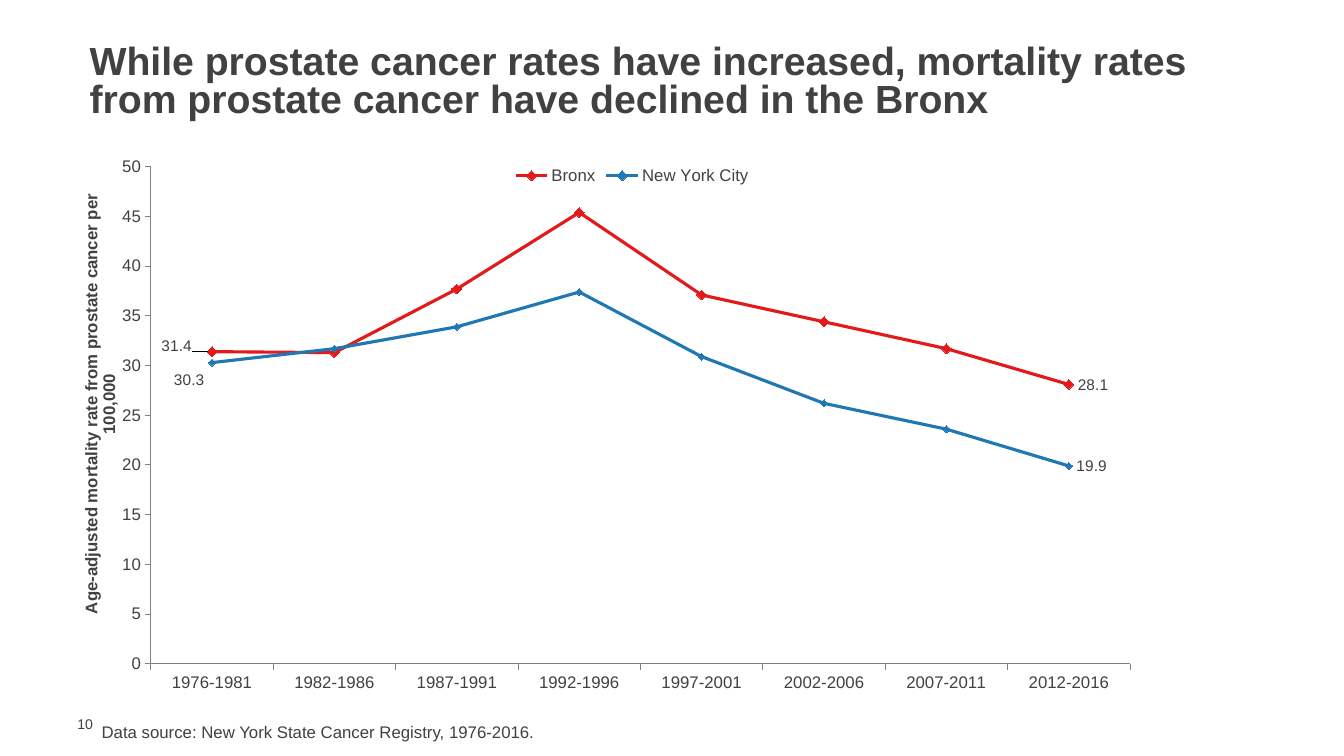
from lxml import etree
from pptx import Presentation
from pptx import util as u
from pptx.chart.data import CategoryChartData
from pptx.dml.color import RGBColor
from pptx.enum import chart as ch, text
from pptx.oxml import parse_xml
from pptx.oxml.ns import nsdecls

INK = RGBColor(0x41, 0x40, 0x42)
GREY = RGBColor(0x80, 0x80, 0x80)
RED = RGBColor(0xE3, 0x1A, 0x1C)
BLUE = RGBColor(0x1F, 0x78, 0xB4)

SPANS = ["1976-1981", "1982-1986", "1987-1991", "1992-1996",
         "1997-2001", "2002-2006", "2007-2011", "2012-2016"]
# name, rates, colour, marker size, shift of the first label
RATES = [
    ("Bronx", [31.4, 31.3, 37.7, 45.4, 37.1, 34.4, 31.7, 28.1], RED, 7, (-0.01, -0.01)),
    ("New York City", [30.3, 31.7, 33.9, 37.4, 30.9, 26.2, 23.6, 19.9], BLUE, 5, (0, 0.03)),
]
LEADERS = (
    f'<c:extLst {nsdecls("c")}><c:ext uri="{{CE6537A1-D6FC-4f65-9D91-7224C49458BB}}" '
    'xmlns:c15="http://schemas.microsoft.com/office/drawing/2012/chart">'
    '<c15:showLeaderLines val="1"/></c:ext></c:extLst>')


def px(n):
    return u.Emu(n * 9144)


def layout(x, y, w=None, h=None, edge=False):
    """Manual chart layout in fractions; edge measures from the chart corner."""
    tags = [("layoutTarget", "inner")] if w else []
    if edge:
        tags += [("xMode", "edge"), ("yMode", "edge")]
    tags += [("x", x), ("y", y)]
    if w:
        tags += [("w", w), ("h", h)]
    body = "".join(f'<c:{t} val="{v}"/>' for t, v in tags)
    return parse_xml(f'<c:layout {nsdecls("c")}><c:manualLayout>{body}'
                     '</c:manualLayout></c:layout>')


def place(node, lay, spot):
    """Put a layout at the given child index, replacing any old one."""
    for old in node.xpath("./c:layout"):
        node.remove(old)
    node.insert(spot, lay)


class Deck:
    def __init__(self, face="Arial"):
        self.face = face
        self.prs = Presentation()
        self.prs.slide_width, self.prs.slide_height = px(1333), px(750)
        self.slide = self.prs.slides.add_slide(self.prs.slide_layouts[6])

    def style(self, font, size, bold=False):
        font.name, font.size, font.bold = self.face, u.Pt(size), bold
        font.color.rgb = INK

    def text(self, box, words, size, bold=False, mid=False, pad=(10, 5, 10, 5), gap=1.0):
        frame = self.slide.shapes.add_textbox(*map(px, box)).text_frame
        frame.word_wrap = True
        frame.margin_left, frame.margin_top, frame.margin_right, frame.margin_bottom = map(px, pad)
        if mid:
            frame.vertical_anchor = text.MSO_ANCHOR.MIDDLE
        frame.text = words
        para = frame.paragraphs[0]
        para.line_spacing = gap
        self.style(para.runs[0].font, size, bold)

    def axis(self, axis):
        axis.has_major_gridlines = False
        axis.major_tick_mark = ch.XL_TICK_MARK.OUTSIDE
        axis.minor_tick_mark = ch.XL_TICK_MARK.NONE
        axis.format.line.color.rgb = GREY
        axis.format.line.width = u.Pt(0.75)
        self.style(axis.tick_labels.font, 12)

    def label(self, point, side):
        label = point.data_label
        self.style(label.font, 11)
        label.position = side

    def line(self, line, tint, size):
        line.smooth = False
        line.format.line.color.rgb = tint
        line.format.line.width = u.Pt(2.25)
        mark = line.marker
        mark.style, mark.size = ch.XL_MARKER_STYLE.DIAMOND, size
        mark.format.fill.solid()
        mark.format.fill.fore_color.rgb = tint
        mark.format.line.color.rgb = tint
        line.data_labels.show_value = False
        self.label(line.points[0], ch.XL_LABEL_POSITION.LEFT)
        self.label(line.points[len(SPANS) - 1], ch.XL_LABEL_POSITION.RIGHT)

    def chart(self, box, title):
        data = CategoryChartData(number_format="0.0")
        data.categories = SPANS
        for name, rates, *_ in RATES:
            data.add_series(name, rates)
        chart = self.slide.shapes.add_chart(
            ch.XL_CHART_TYPE.LINE_MARKERS, *map(px, box), data).chart
        self.style(chart.font, 10)
        chart.has_title = False
        chart.plots[0].vary_by_categories = False

        self.axis(chart.category_axis)
        rate = chart.value_axis
        self.axis(rate)
        rate.minimum_scale, rate.maximum_scale, rate.major_unit = 0, 50, 5
        rate.tick_labels.number_format = "0"
        rate.tick_labels.number_format_is_linked = False
        rate.axis_title.text_frame.text = title
        self.style(rate.axis_title.text_frame.paragraphs[0].runs[0].font, 12, True)

        chart.has_legend = True
        chart.legend.position = ch.XL_LEGEND_POSITION.TOP
        chart.legend.include_in_layout = False
        self.style(chart.legend.font, 12)

        for line, (_, _, tint, size, _) in zip(chart.plots[0].series, RATES):
            self.line(line, tint, size)

        root = chart.element
        for labels, (*_, shift) in zip(root.xpath(".//c:ser/c:dLbls"), RATES):
            place(labels.xpath("./c:dLbl")[0], layout(*shift), 1)
            labels.append(etree.fromstring(LEADERS))
        place(root.xpath(".//c:plotArea")[0], layout(0.106, 0.017, 0.883, 0.884, True), 0)
        place(root.xpath(".//c:valAx/c:title")[0], layout(0.04, 0.06, edge=True), 1)
        place(root.xpath(".//c:legend")[0], layout(0.43, 0.01, edge=True), 1)


def main():
    deck = Deck()
    deck.text((67, 710, 43, 17), "10", 10, mid=True, pad=(10, 0, 0, 0))
    deck.text((91, 711, 992, 30),
              "Data source: New York State Cancer Registry, 1976-2016.", 12)
    deck.text((79, 40, 1175, 85),
              "While prostate cancer rates have increased, mortality rates "
              "from prostate cancer have declined in the Bronx",
              28, bold=True, mid=True, gap=0.8)
    deck.chart((33, 156, 1100, 558),
               "Age-adjusted mortality rate from prostate cancer per 100,000")
    deck.prs.save("out.pptx")


if __name__ == "__main__":
    main()
